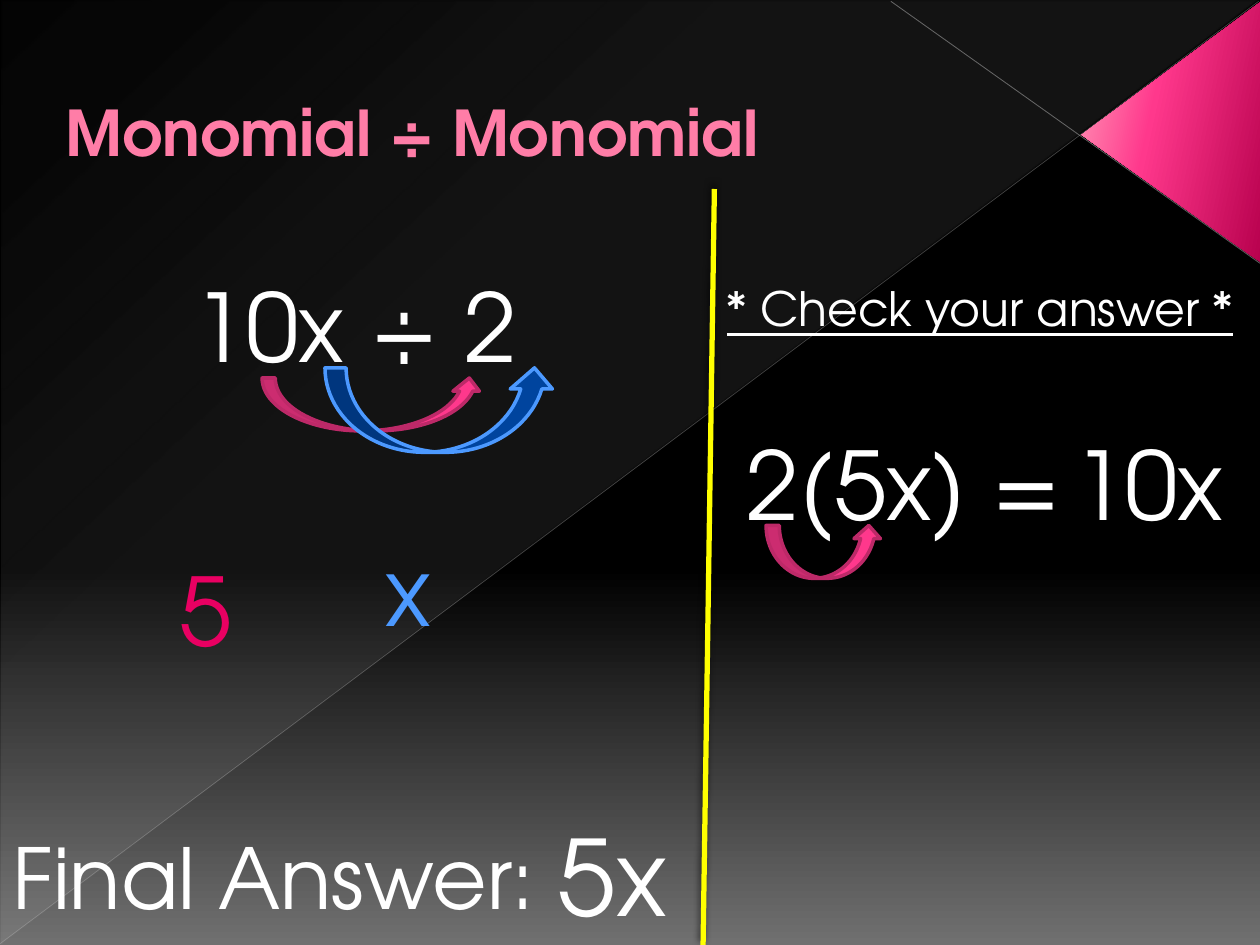
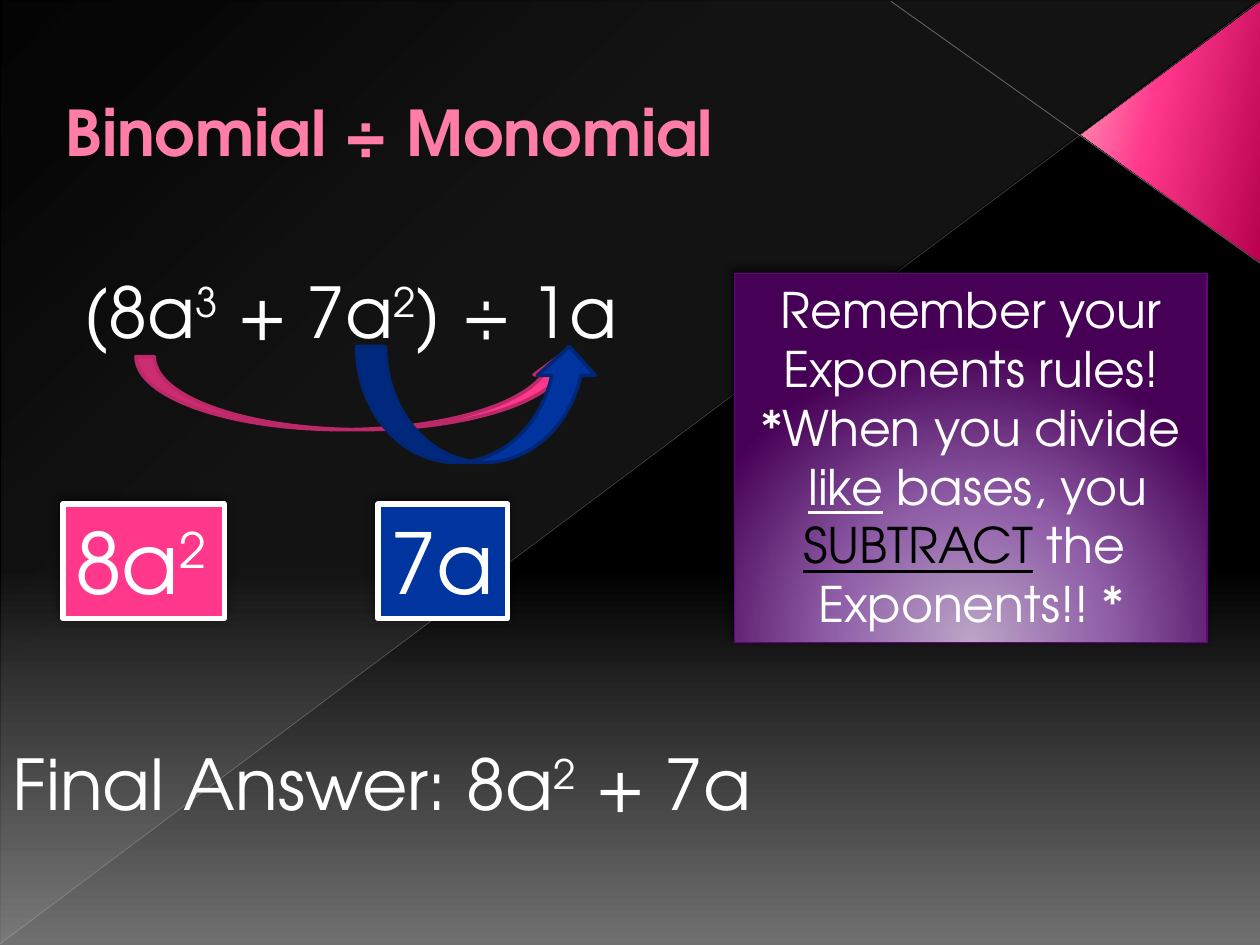
import pptx
import pptx.dml.color
import pptx.enum.shapes
import pptx.enum.text
import pptx.oxml.ns
import pptx.util
from lxml import etree

RGB = pptx.dml.color.RGBColor
KIND = pptx.enum.shapes.MSO_SHAPE
ALIGN = pptx.enum.text.PP_ALIGN
ANCHOR = pptx.enum.text.MSO_ANCHOR
SIZE = pptx.enum.text.MSO_AUTO_SIZE
qn = pptx.oxml.ns.qn

# Colours
BLACK = RGB(0x00, 0x00, 0x00)
WHITE = RGB(0xFF, 0xFF, 0xFF)
GREY = RGB(0x70, 0x70, 0x70)
MIST = RGB(0xD2, 0xD2, 0xD2)
SILVER = RGB(0xC6, 0xC6, 0xC6)
ASH = RGB(0xBF, 0xBF, 0xBF)
ROSE = RGB(0xFF, 0x7D, 0xA7)
BLUSH = RGB(0xFF, 0x9C, 0xB9)
PINK = RGB(0xFF, 0x38, 0x8C)
BERRY = RGB(0xBD, 0x29, 0x68)
WINE = RGB(0xB8, 0x01, 0x4E)
EDGE = RGB(0xB1, 0x27, 0x61)
RED = RGB(0xE9, 0x00, 0x62)
YELLOW = RGB(0xFF, 0xFF, 0x00)
SKY = RGB(0x4C, 0x99, 0xFF)
BLUE = RGB(0x00, 0x44, 0x9E)
NAVY = RGB(0x00, 0x34, 0x9E)
INK = RGB(0x00, 0x26, 0x75)
LILAC = RGB(0xBB, 0xA5, 0xC6)
MAUVE = RGB(0x90, 0x5F, 0xA8)
PLUM = RGB(0x46, 0x00, 0x55)
VIOLET = RGB(0x68, 0x00, 0x7F)

FONT = "TeX Gyre Adventor"
SCALE = 9144  # EMU in one px, 100 px to the inch


def px(*nums):
    return [pptx.util.Emu(num * SCALE) for num in nums]


def node(root, tag, **attrs):
    return etree.SubElement(root, qn(tag), {k: str(v) for k, v in attrs.items()})


def tint(root, color, alpha=100):
    """Add a colour with an opacity in percent."""
    item = node(root, "a:srgbClr", val=color)
    if alpha < 100:
        node(item, "a:alpha", val=alpha * 1000)


def blend(fill, owner, stops, angle=None, focus=None):
    """Fill with (place, colour, opacity) stops, along an angle or round a focus."""
    fill.gradient()
    grad = next(owner.iter(qn("a:gradFill")))
    for child in list(grad):
        grad.remove(child)
    rows = node(grad, "a:gsLst")
    for place, *color in stops:
        tint(node(rows, "a:gs", pos=place * 1000), *color)
    if focus:
        ring = node(grad, "a:path", path="circle")
        sides = {side: num * 1000 for side, num in zip("ltrb", focus)}
        node(ring, "a:fillToRect", **sides)
    else:
        node(grad, "a:lin", ang=angle * 60000, scaled=0)


def shade(effects, alpha, blur, dist):
    drop = node(effects, "a:outerShdw", blurRad=blur * 12700, dist=dist * 12700,
                dir=245 * 60000, algn="tl", rotWithShape=0)
    tint(drop, BLACK, alpha)


class Deck:
    def __init__(self):
        self.prs = pptx.Presentation()
        self.prs.slide_width, self.prs.slide_height = px(1000, 750)
        self.slide = None

    def page(self, title, body, box, size, align=ALIGN.LEFT):
        """Start a slide with its title and its formula."""
        first = self.slide is None
        self.slide = self.prs.slides.add_slide(self.prs.slide_layouts[1])
        if first:
            self.dress()
        head, text = self.slide.placeholders
        self.place(head, (42, 30, 792, 149))
        self.style(head.text_frame, [title], 36, ROSE, bold=True)
        head.text_frame.vertical_anchor = ANCHOR.MIDDLE
        for run in head.text_frame.paragraphs[0].runs:
            edge = etree.Element(qn("a:ln"), w="6350")
            tint(node(edge, "a:solidFill"), EDGE)
            run.font._element.insert(0, edge)
        self.place(text, box)
        self.style(text.text_frame, [body], size, align=align)
        props = text.text_frame.paragraphs[0]._p.get_or_add_pPr()
        props.set("marL", str(6 * SCALE))
        props.set("indent", "0")
        node(props, "a:buNone")

    def dress(self):
        """Move the shared backdrop to the slide master."""
        master = self.prs.slide_master
        blend(master.background.fill, master.element,
              [(0, BLACK), (60, BLACK), (100, GREY)], 90)
        veil = self.shape(KIND.RIGHT_TRIANGLE, (1, 1, 998, 748))
        blend(veil.fill, veil.element,
              [(0, MIST, 10), (70, MIST, 8), (100, MIST, 1)], 133)
        wedge = self.shape(KIND.ISOSCELES_TRIANGLE, (826, 34, 207, 142))
        wedge.adjustments[0] = 0.51
        wedge.rotation = 90
        blend(wedge.fill, wedge.element, [(0, WINE), (60, PINK), (100, BLUSH)], 258)
        for part in (veil, wedge):
            part.element.spPr.xfrm.set("flipV", "1")
        lines = [self.line((1000, 209, 707, 1), SILVER, 0.47, 45),
                 self.line((0, 749, 999, 1), ASH, 0.39, 35)]
        for spot, part in enumerate([veil, wedge] + lines, 2):
            master.shapes.element.insert(spot, part.element)

    def place(self, shape, box):
        shape.left, shape.top, shape.width, shape.height = px(*box)

    def style(self, frame, lines, size, color=WHITE, align=ALIGN.LEFT,
              bold=False, wrap=True, grow=False):
        """Set lines of runs split by |: ^ raises, _ underlines, ! also blackens."""
        frame.word_wrap = wrap
        frame.auto_size = SIZE.SHAPE_TO_FIT_TEXT if grow else SIZE.NONE
        frame.vertical_anchor = ANCHOR.TOP
        for num, line in enumerate(lines):
            par = frame.add_paragraph() if num else frame.paragraphs[0]
            par.alignment = align
            for piece in line.split("|"):
                mark = piece[0] if piece[0] in "^_!" else ""
                run = par.add_run()
                run.text = piece[len(mark):]
                font = run.font
                font.name, font.size, font.bold = FONT, pptx.util.Pt(size), bold
                font.color.rgb = BLACK if mark == "!" else color
                if mark == "^":
                    font._element.set("baseline", "30000")
                elif mark:
                    font.underline = True

    def text(self, box, line, size, color=WHITE, wrap=True):
        label = self.slide.shapes.add_textbox(*px(*box))
        self.style(label.text_frame, [line], size, color, wrap=wrap, grow=True)

    def shape(self, kind, box, fill=None, edge=None, width=0):
        item = self.slide.shapes.add_shape(kind, *px(*box))
        item.shadow.inherit = False
        if fill is not None:
            item.fill.solid()
            item.fill.fore_color.rgb = fill
        if edge is None:
            item.line.fill.background()
        else:
            item.line.color.rgb = edge
            item.line.width = pptx.util.Pt(width)
        return item

    def arrow(self, box, fill=PINK, edge=BERRY):
        self.shape(KIND.CURVED_UP_ARROW, box, fill, edge, 2)

    def card(self, box, line, fill):
        item = self.shape(KIND.RECTANGLE, box, fill, WHITE, 3)
        shade(item.element.spPr.find(qn("a:effectLst")), 50, 5, 2)
        self.style(item.text_frame, [line], 48, wrap=False, grow=True)

    def note(self, box, lines):
        item = self.shape(KIND.RECTANGLE, box, edge=VIOLET, width=0.75)
        blend(item.fill, item.element, [(0, LILAC), (46, MAUVE), (100, PLUM)],
              focus=(50, 155, 50, -55))
        shade(item.element.spPr.find(qn("a:effectLst")), 60, 4, 3)
        self.style(item.text_frame, lines, 28, align=ALIGN.CENTER, grow=True)

    def line(self, ends, color, width, alpha=100, shadow=False):
        straight = pptx.enum.shapes.MSO_CONNECTOR.STRAIGHT
        item = self.slide.shapes.add_connector(straight, *px(*ends))
        item.line.color.rgb = color
        item.line.width = pptx.util.Pt(width)
        props = item.element.spPr
        if alpha < 100:
            node(next(props.iter(qn("a:srgbClr"))), "a:alpha", val=alpha * 1000)
        effects = node(props, "a:effectLst")
        if shadow:
            shade(effects, 60, 4, 3)
        return item


def main():
    deck = Deck()

    # Monomial by monomial: working on the left
    deck.page("Monomial ÷ Monomial", "10x ÷ 2", (0, 208, 558, 125), 54, ALIGN.CENTER)
    deck.arrow((208, 300, 175, 42))
    deck.text((133, 433, 75, 101), "5", 54, RED)
    deck.arrow((258, 292, 183, 67), BLUE, SKY)
    deck.text((275, 417, 78, 101), " x", 54, SKY, wrap=False)
    deck.text((0, 650, 458, 91), "Final Answer:", 48)
    deck.text((433, 639, 107, 111), "5x", 60, wrap=False)

    # Check on the right
    deck.line((558, 750, 567, 150), YELLOW, 3, shadow=True)
    deck.text((567, 217, 433, 56), "_* Check your answer *", 27)
    deck.text((583, 333, 284, 101), "2(5x) =", 54, wrap=False)
    deck.arrow((608, 417, 92, 42))
    deck.text((842, 333, 140, 101), "10x", 54, wrap=False)

    # Binomial by monomial: working, answer and rule
    deck.page("Binomial ÷ Monomial", "(8a|^3| + 7a|^2|) ÷ 1a", (50, 208, 475, 80), 40)
    deck.arrow((108, 283, 350, 58))
    deck.card((50, 400, 128, 91), "8a|^2", PINK)
    deck.arrow((283, 275, 192, 92), NAVY, INK)
    deck.card((300, 400, 103, 91), "7a", NAVY)
    deck.text((0, 583, 633, 77), "Final Answer: 8a|^2| + 7a", 40)
    deck.note((583, 217, 375, 293), [
        "Remember your", "Exponents rules!", "*When you divide",
        " |_like| bases, you", "!SUBTRACT| the ", "Exponents!! *"])

    deck.prs.save("out.pptx")


if __name__ == "__main__":
    main()
